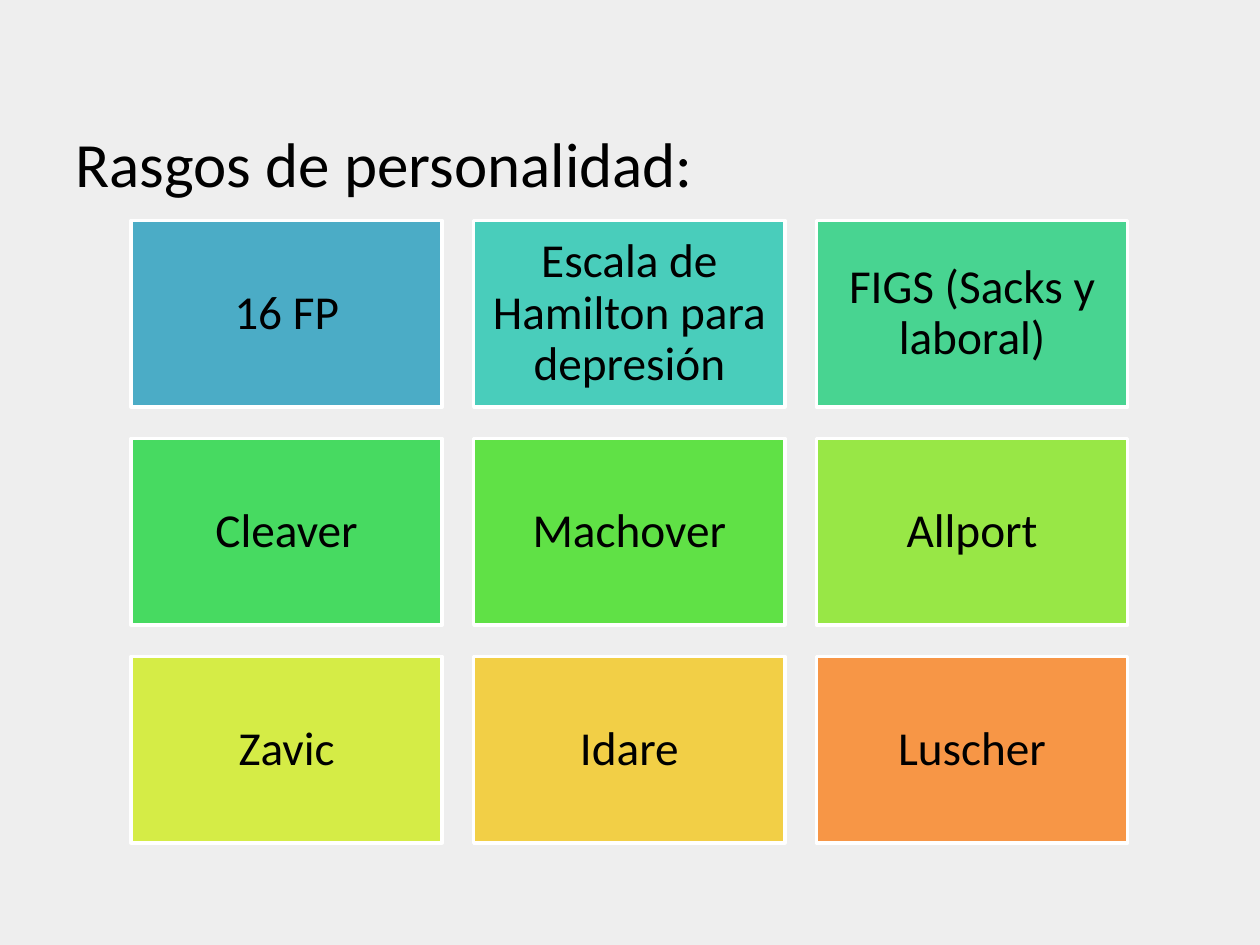
from pptx import Presentation
from pptx.dml.color import RGBColor
from pptx.enum.shapes import MSO_SHAPE as Shape
from pptx.enum.text import MSO_ANCHOR as Anchor, PP_ALIGN as Align
from pptx.util import Inches, Pt

COLORS = {"background": "EEEEEE", "text": "000000", "border": "FFFFFF"}
FONT = "Calibri"

# Personality tests with their tile colours, in reading order
TESTS = [
    ("16 FP", "4BACC6"),
    ("Escala de Hamilton para depresión", "49CDBB"),
    ("FIGS (Sacks y laboral)", "48D491"),
    ("Cleaver", "47DA61"),
    ("Machover", "60E146"),
    ("Allport", "98E746"),
    ("Zavic", "D5EC46"),
    ("Idare", "F2CF46"),
    ("Luscher", "F79646"),
]

# Tile grid, in inches
COLUMNS = 3
LEFT, TOP = 1.04, 1.75
WIDTH, HEIGHT = 2.47, 1.48
GAP = 0.25
PADDING = Inches(0.11)


def style_text(paragraph, size, align):
    paragraph.alignment = align
    paragraph.font.name = FONT
    paragraph.font.size = Pt(size)
    paragraph.font.color.rgb = RGBColor.from_string(COLORS["text"])


prs = Presentation()
prs.slide_width, prs.slide_height = Inches(10), Inches(7.5)
slide = prs.slides.add_slide(prs.slide_layouts[5])

# Background
slide.background.fill.solid()
slide.background.fill.fore_color.rgb = RGBColor.from_string(COLORS["background"])

# Title
title = slide.shapes.title
title.left, title.top = Inches(0.5), Inches(0.39)
title.width, title.height = Inches(9), Inches(1.25)
title.text_frame.text = "Rasgos de personalidad:"
title.text_frame.vertical_anchor = Anchor.BOTTOM
style_text(title.text_frame.paragraphs[0], 36, Align.LEFT)

# Test tiles
for index, (test, color) in enumerate(TESTS):
    row, column = divmod(index, COLUMNS)
    tile = slide.shapes.add_shape(
        Shape.RECTANGLE,
        Inches(LEFT + column * (WIDTH + GAP)),
        Inches(TOP + row * (HEIGHT + GAP)),
        Inches(WIDTH),
        Inches(HEIGHT),
    )
    tile.shadow.inherit = False
    tile.fill.solid()
    tile.fill.fore_color.rgb = RGBColor.from_string(color)
    tile.line.color.rgb = RGBColor.from_string(COLORS["border"])
    tile.line.width = Pt(2)

    label = tile.text_frame
    label.word_wrap = True
    label.vertical_anchor = Anchor.MIDDLE
    label.margin_left = label.margin_right = PADDING
    label.margin_top = label.margin_bottom = PADDING
    label.text = test
    label.paragraphs[0].line_spacing = 0.9
    style_text(label.paragraphs[0], 27, Align.CENTER)

prs.save("out.pptx")
